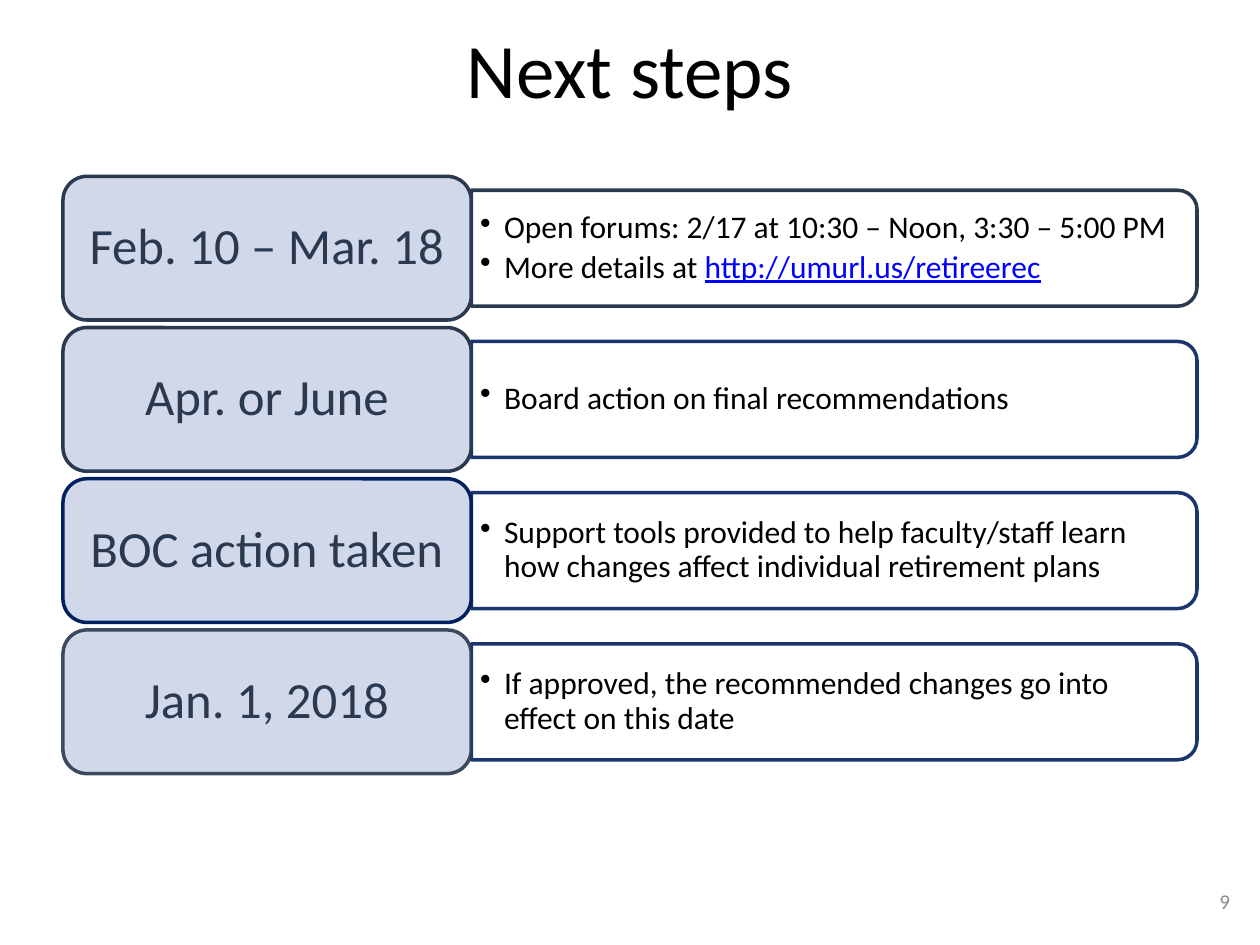
from dataclasses import dataclass

from lxml.etree import SubElement
from pptx import Presentation
from pptx.dml.color import RGBColor
from pptx.enum.shapes import MSO_SHAPE
from pptx.enum.text import MSO_ANCHOR, PP_ALIGN
from pptx.oxml.ns import qn
from pptx.util import Inches, Pt

COLORS = {
    "black": "000000",
    "slate": "2A394F",
    "navy": "002060",
    "pale": "D0D8E9",
    "link": "0000FF",
    "gray": "8C8C8C",
}
FONT = "Calibri"

LEFT, TOP, PITCH = 0.5, 1.4, 1.2
CARD_W, CARD_H = 3.24, 1.14
PANEL_W, PANEL_H = 5.76, 0.92
TEXT_W, TEXT_H = 5.72, 0.83


@dataclass
class Run:
    text: str
    size: float
    color: str = "black"
    underline: bool = False


@dataclass
class Edge:
    color: str
    alpha: int = 100


@dataclass
class Step:
    label: str
    notes: list[list[Run]]
    card: Edge
    panel: Edge


def note(text: str) -> Run:
    return Run(text, 18)


SLATE, NAVY = Edge("slate"), Edge("navy")
FADED = Edge("navy", 90)

STEPS = [
    Step(
        "Feb. 10 – Mar. 18",
        [
            [note("Open forums: 2/17 at 10:30 – Noon, 3:30 – 5:00 PM")],
            [note("More details at "),
             Run("http://umurl.us/retireerec", 18, "link", True)],
        ],
        SLATE, SLATE,
    ),
    Step("Apr. or June", [[note("Board action on final recommendations")]], SLATE, FADED),
    Step(
        "BOC action taken",
        [[note("Support tools provided to help faculty/staff learn "
               "how changes affect individual retirement plans")]],
        NAVY, FADED,
    ),
    Step(
        "Jan. 1, 2018",
        [[note("If approved, the recommended changes go into effect on this date")]],
        Edge("slate", 90), FADED,
    ),
]


def rgb(name: str) -> RGBColor:
    return RGBColor.from_string(COLORS[name])


def add_runs(para, runs: list[Run]) -> None:
    for item in runs:
        run = para.add_run()
        run.text = item.text
        run.font.name = FONT
        run.font.size = Pt(item.size)
        run.font.color.rgb = rgb(item.color)
        if item.underline:
            run.font.underline = True


def set_frame(frame, side: float, end: float) -> None:
    """Wrap and centre the text, with side and top/bottom insets in inches."""
    frame.word_wrap = True
    frame.vertical_anchor = MSO_ANCHOR.MIDDLE
    frame.margin_left = frame.margin_right = Inches(side)
    frame.margin_top = frame.margin_bottom = Inches(end)


def add_box(slide, left: float, top: float, width: float, height: float,
            side: float = 0.1, end: float = 0.05):
    box = slide.shapes.add_textbox(
        Inches(left), Inches(top), Inches(width), Inches(height))
    set_frame(box.text_frame, side, end)
    return box.text_frame


def add_line(slide, left: float, top: float, width: float, height: float,
             align: PP_ALIGN, run: Run) -> None:
    para = add_box(slide, left, top, width, height).paragraphs[0]
    para.alignment = align
    add_runs(para, [run])


def add_shape(slide, kind: MSO_SHAPE, left: float, top: float,
              width: float, height: float, edge: Edge):
    shape = slide.shapes.add_shape(
        kind, Inches(left), Inches(top), Inches(width), Inches(height))
    shape.shadow.inherit = False
    shape.fill.background()
    shape.line.width = Pt(2)
    shape.line.color.rgb = rgb(edge.color)
    if edge.alpha < 100:
        tone = shape.line.fill._xPr.find(".//" + qn("a:srgbClr"))
        SubElement(tone, qn("a:alpha"), val=str(edge.alpha * 1000))
    return shape


def add_bullet(para) -> None:
    props = para._p.get_or_add_pPr()
    props.set("marL", str(Inches(0.19)))
    props.set("indent", str(-Inches(0.19)))
    SubElement(props, qn("a:buChar"), char="•")


def add_panel(slide, step: Step, mid: float) -> None:
    """Draw the notes panel, a tall shape turned so its round end faces right."""
    left = LEFT + CARD_W
    panel = add_shape(
        slide, MSO_SHAPE.ROUND_2_SAME_RECTANGLE,
        left + (PANEL_W - PANEL_H) / 2, mid - PANEL_W / 2,
        PANEL_H, PANEL_W, step.panel)
    panel.rotation = 90
    frame = add_box(slide, left, mid - TEXT_H / 2, TEXT_W, TEXT_H, 0.07, 0.04)
    for i, runs in enumerate(step.notes):
        para = frame.add_paragraph() if i else frame.paragraphs[0]
        add_bullet(para)
        para.line_spacing = 0.9
        para.space_after = Pt(3)
        add_runs(para, runs)


def add_card(slide, step: Step, top: float) -> None:
    card = add_shape(slide, MSO_SHAPE.ROUNDED_RECTANGLE,
                     LEFT, top, CARD_W, CARD_H, step.card)
    card.fill.solid()
    card.fill.fore_color.rgb = rgb("pale")
    set_frame(card.text_frame, 0.12, 0.06)
    para = card.text_frame.paragraphs[0]
    para.alignment = PP_ALIGN.CENTER
    para.line_spacing = 0.9
    add_runs(para, [Run(step.label, 29, "slate")])


def main() -> None:
    deck = Presentation()
    deck.slide_width, deck.slide_height = Inches(10), Inches(7.5)
    slide = deck.slides.add_slide(deck.slide_layouts[6])
    add_line(slide, 0.5, -0.09, 9, 1.25, PP_ALIGN.CENTER, Run("Next steps", 44))
    for i, step in enumerate(STEPS):
        top = TOP + i * PITCH
        add_panel(slide, step, top + CARD_H / 2)
        add_card(slide, step, top)
    add_line(slide, 7.53, 6.95, 2.33, 0.4, PP_ALIGN.RIGHT, Run("9", 12, "gray"))
    deck.save("out.pptx")


if __name__ == "__main__":
    main()
